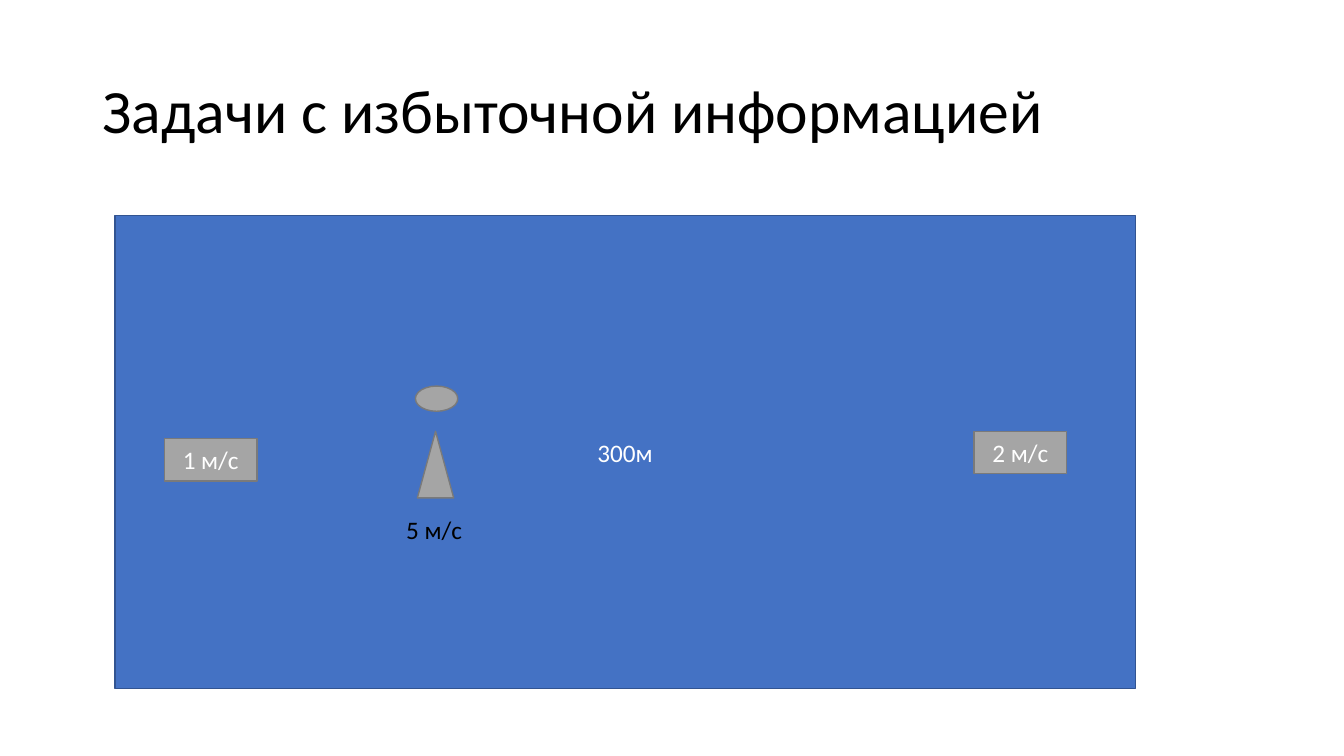
from pptx import Presentation
from pptx import util as u
from pptx.dml.color import RGBColor
from pptx.enum import shapes, text

BLACK = RGBColor(0x00, 0x00, 0x00)
WHITE = RGBColor(0xFF, 0xFF, 0xFF)
BLUE = RGBColor(0x44, 0x72, 0xC4)
DARK_BLUE = RGBColor(0x32, 0x54, 0x91)
GRAY = RGBColor(0xA5, 0xA5, 0xA5)
DARK_GRAY = RGBColor(0x7A, 0x7A, 0x7A)

TITLE = {"size": u.Pt(44), "color": BLACK, "line_spacing": 0.9,
         "anchor": text.MSO_ANCHOR.MIDDLE}
LABEL = {"size": u.Pt(18), "color": WHITE, "alignment": text.PP_ALIGN.CENTER,
         "anchor": text.MSO_ANCHOR.MIDDLE}
CAPTION = {"size": u.Pt(18), "color": BLACK}


def write(shape, wording, style):
    """Put one styled paragraph of text into a shape."""
    frame = shape.text_frame
    frame.word_wrap = True
    paragraph = frame.paragraphs[0]
    run = paragraph.add_run()
    run.text = wording
    run.font.name = "Calibri"
    targets = {"size": (run.font, "size"), "color": (run.font.color, "rgb"),
               "alignment": (paragraph, "alignment"),
               "line_spacing": (paragraph, "line_spacing"),
               "anchor": (frame, "vertical_anchor")}
    for name, value in style.items():
        target, attribute = targets[name]
        setattr(target, attribute, value)


def add_text(slide, box, wording, style):
    """Add a wrapping text box."""
    write(slide.shapes.add_textbox(*map(u.Inches, box)), wording, style)


def add_figure(slide, kind, box, fill=GRAY, outline=DARK_GRAY, wording=""):
    """Add a filled, outlined shape with an optional centred label."""
    shape = slide.shapes.add_shape(kind, *map(u.Inches, box))
    shape.shadow.inherit = False
    shape.fill.solid()
    shape.fill.fore_color.rgb = fill
    shape.line.color.rgb = outline
    shape.line.width = u.Pt(1)
    if wording:
        write(shape, wording, LABEL)
    return shape


def add_boat(slide, left, top, speed):
    """Add a boat carrying its speed."""
    boat = add_figure(slide, shapes.MSO_SHAPE.TRAPEZOID,
                      (left, top, 0.92, 0.42), wording=speed)
    boat.adjustments[0] = 0


def add_person(slide, left, top, speed):
    """Add a person made of a body and a head, with the speed below."""
    add_figure(slide, shapes.MSO_SHAPE.ISOSCELES_TRIANGLE,
               (left + 0.02, top + 0.45, 0.36, 0.66))
    add_figure(slide, shapes.MSO_SHAPE.OVAL, (left, top, 0.42, 0.25))
    add_text(slide, (left - 0.19, top + 1.22, 1.54, 0.4), speed, CAPTION)


def add_scene(slide, left, top, width, height):
    """Add the field with two boats and a person between them."""
    add_figure(slide, shapes.MSO_SHAPE.RECTANGLE, (left, top, width, height),
               BLUE, DARK_BLUE, "300м")
    add_boat(slide, left + 0.49, top + 2.21, "1 м/с")
    add_boat(slide, left + 8.52, top + 2.14, "2 м/с")
    add_person(slide, left + 2.98, top + 1.69, "5 м/с")


def main():
    """Build and save the presentation."""
    presentation = Presentation()
    presentation.slide_width = u.Inches(13.33)
    presentation.slide_height = u.Inches(7.5)
    slide = presentation.slides.add_slide(presentation.slide_layouts[6])
    add_text(slide, (0.92, 0.4, 11.5, 1.45),
             "Задачи с избыточной информацией", TITLE)
    add_scene(slide, 1.14, 2.14, 10.12, 4.69)
    presentation.save("out.pptx")


if __name__ == "__main__":
    main()
